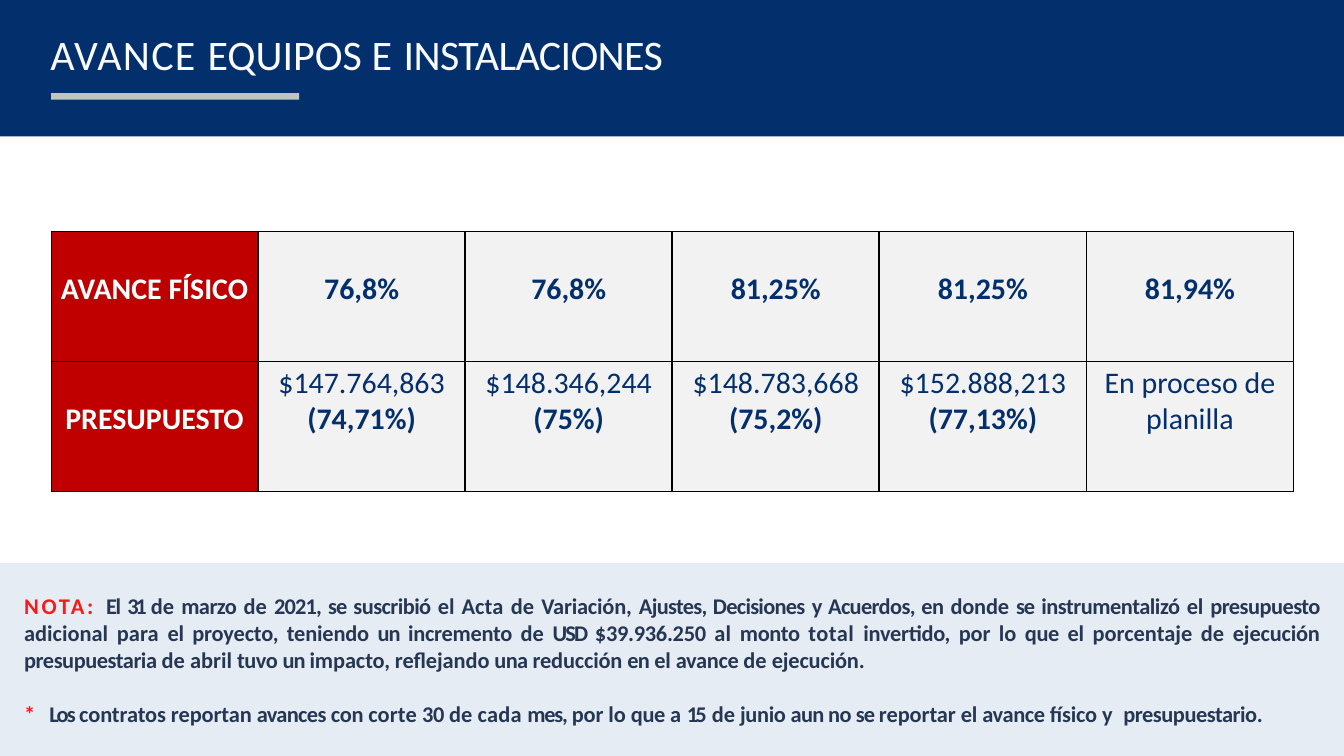
from typing import NamedTuple
from lxml.etree import SubElement as Sub
from pptx import Presentation
from pptx.dml.color import RGBColor as RGB
from pptx.enum.shapes import MSO_SHAPE as Kind
from pptx.enum.text import MSO_ANCHOR as Anchor, MSO_AUTO_SIZE as Fit, PP_ALIGN as Align
from pptx.oxml.ns import qn
from pptx.util import Inches, Pt

UNIT = 0.25
COLS, ROWS = 80, 45
NAVY, RED, PALE, INK, ALERT = "032F6D", "C00000", "F2F2F2", "263754", "FF1616"
TITLE = [("AVANCE ", 1.4), ("EQUIPOS ", 0), ("E ", 1.1), ("INSTALACIONES", -0.7)]
GRID = [
    ["AVANCE FÍSICO", "76,8%", "76,8%", "81,25%", "81,25%", "81,94%"],
    ["PRESUPUESTO", "$147.764,863\n(74,71%)", "$148.346,244\n(75%)",
     "$148.783,668\n(75,2%)", "$152.888,213\n(77,13%)", "En proceso de planilla"],
]
NOTE = [
    ("NOTA: ", 2.9), ("El ", -1.3), ("31 ", -3.4), ("de ", 0), ("marzo ", -0.6),
    ("de ", 0), ("2021, ", -0.9), ("se ", -1.2), ("suscribió ", -0.6), ("el ", -0.2),
    ("Acta ", 0.1), ("de ", 0), ("Variación, ", -0.2), ("Ajustes, Decisiones ", -0.8),
    ("y ", -1.6), ("Acuerdos, en ", -0.7), ("donde ", -0.2), ("se ", -1.2),
    ("instrumentalizó ", -0.5), ("el ", -0.2), ("presupuesto ", -0.6),
    ("adicional ", 0), ("para ", 0.1), ("el proyecto, teniendo ", -0.2), ("un ", -1.1),
    ("incremento ", -0.3), ("de ", 0), ("USD ", -2), ("$39.936.250 ", -0.3),
    ("al ", 0.1), ("monto ", -0.4), ("total ", 0.5), ("invertido, ", -0.3),
    ("por lo ", -0.1), ("que ", -0.4), ("el ", -0.2), ("porcentaje de ", 0),
    ("ejecución ", -0.2), ("presupuestaria ", -0.5), ("de abril ", 0), ("tuvo ", -0.5),
    ("un ", -1.1), ("impacto, reflejando ", -0.1), ("una ", -0.7),
    ("reducción ", -0.2), ("en ", -0.7), ("el ", -0.2), ("avance ", -0.4), ("de ", 0),
    ("ejecución.", -0.2),
]
CUTOFF = [
    ("* ", 4.8), ("Los ", -1.9), ("contratos reportan ", -0.1), ("avances ", -0.7),
    ("con ", -0.3), ("corte ", 0.1), ("30 ", -0.4), ("de ", 0), ("cada ", 0.3),
    ("mes, ", -1.3), ("por lo ", -0.1), ("que ", -0.4), ("a ", 0.3), ("15", -3),
    (" ", -0.6), ("de ", 0), ("junio ", -0.4), ("aun no ", -0.7), ("se ", -1.2),
    ("reportar ", -0.1), ("el ", -0.2), ("avance ", -0.4), ("físico ", -0.2),
    ("y", -1.6), (" ", 6), ("presupuestario.", -0.5),
]


class Box(NamedTuple):
    """A region in grid columns and rows."""
    x: float
    y: float
    w: float
    h: float

    def inner(self, x, y, w, h):
        """Return a region placed from this one's corner."""
        return Box(self.x + x, self.y + y, w, h)

    def size(self):
        """Return left, top, width and height as lengths."""
        return [Inches(v * UNIT) for v in self]


def apply(item, **vals):
    """Set each given value as an attribute of the item."""
    for name, val in vals.items():
        setattr(item, name, val)


def paint(fill, hue):
    """Give a fill a solid colour."""
    fill.solid()
    fill.fore_color.rgb = RGB.from_string(hue)


def write(para, text, hue, size, bold=False, gap=0):
    """Add a styled run with letter spacing to a paragraph."""
    run = para.add_run()
    run.text = text
    apply(run.font, name="Calibri", size=Pt(size), bold=bold)
    paint(run.font.fill, hue)
    if gap:
        run._r.get_or_add_rPr().set("spc", str(round(gap * 100)))


def block(slide, box, hue):
    """Draw a plain filled rectangle."""
    shape = slide.shapes.add_shape(Kind.RECTANGLE, *box.size())
    shape.shadow.inherit = False
    shape.line.fill.background()
    paint(shape.fill, hue)
    return shape


def setup(frame):
    """Remove the frame's insets and fix its size."""
    apply(frame, margin_left=0, margin_right=0, margin_top=Inches(0.01),
          margin_bottom=0, word_wrap=True, vertical_anchor=Anchor.TOP,
          auto_size=Fit.NONE)


def header(slide, box):
    """Build the title band with its underline."""
    block(slide, box, NAVY)
    block(slide, box.inner(3.04, 5.54, 14.76, 0.4), "BEC6BF")
    title = slide.shapes.title
    slide.shapes._spTree.append(title._element)
    names = ("left", "top", "width", "height")
    apply(title, **dict(zip(names, box.inner(3, 1.64, 46.56, 3.08).size())))
    setup(title.text_frame)
    para = title.text_frame.paragraphs[0]
    apply(para, alignment=Align.LEFT, space_before=Pt(1))
    for text, gap in TITLE:
        write(para, text, "F9FBFF", 45, gap=gap)


def edge(cell, sides):
    """Draw black cell borders with the given widths."""
    props = cell._tc.get_or_add_tcPr()
    for i, (side, width) in enumerate(sides.items()):
        line = Sub(props, qn(f"a:ln{side}"), w=str(Pt(width)))
        Sub(Sub(line, qn("a:solidFill")), qn("a:srgbClr"), val="000000")
        props.insert(i, line)


def table(slide, box):
    """Build the progress table with a red lead column."""
    rows, cols = len(GRID), len(GRID[0])
    grid = slide.shapes.add_table(rows, cols, *box.size()).table
    apply(grid, first_row=False, horz_banding=False)
    for r, row in enumerate(GRID):
        for c, text in enumerate(row):
            cell, lead = grid.cell(r, c), c == 0
            high = lead or r == 0
            apply(cell, margin_top=Inches(0.59 if high else 0.05),
                  vertical_anchor=Anchor.TOP)
            paint(cell.fill, RED if lead else PALE)
            for i, line in enumerate(text.split("\n")):
                frame = cell.text_frame
                para = frame.add_paragraph() if i else frame.paragraphs[0]
                para.alignment = Align.CENTER
                write(para, line, "FFFFFF" if lead else NAVY, 32, high or i > 0)
            outer = {"L": lead, "R": c == cols - 1, "T": r == 0, "B": r == rows - 1}
            edge(cell, {k: 1 if out else 2.25 for k, out in outer.items()})


def footer(slide, box):
    """Build the tinted panel with the two notes."""
    panel = block(slide, box, "8AABCA")
    tint = panel._element.spPr.find(qn("a:solidFill"))[0]
    Sub(tint, qn("a:alpha"), val="22000")
    frame = slide.shapes.add_textbox(*box.inner(1.44, 1.7, 77.12, 8.12).size()).text_frame
    setup(frame)
    paras = [frame.paragraphs[0], frame.add_paragraph()]
    forms = [{"alignment": Align.JUSTIFY, "space_before": Pt(1)},
             {"alignment": Align.LEFT, "space_before": Pt(29.8)}]
    for para, form, runs in zip(paras, forms, (NOTE, CUTOFF)):
        apply(para, **form)
        for i, (text, gap) in enumerate(runs):
            write(para, text, INK if i else ALERT, 24, True, gap)


def main():
    """Build and save the slide."""
    deck = Presentation()
    apply(deck, slide_width=Inches(COLS * UNIT), slide_height=Inches(ROWS * UNIT))
    slide = deck.slides.add_slide(deck.slide_layouts[5])
    page = Box(0, 0, COLS, ROWS)
    header(slide, page.inner(0, 0, COLS, 8.12))
    table(slide, page.inner(3.04, 13.8, 73.96, 15.44))
    footer(slide, page.inner(0, 33.5, COLS, 11.5))
    deck.save("out.pptx")


if __name__ == "__main__":
    main()
